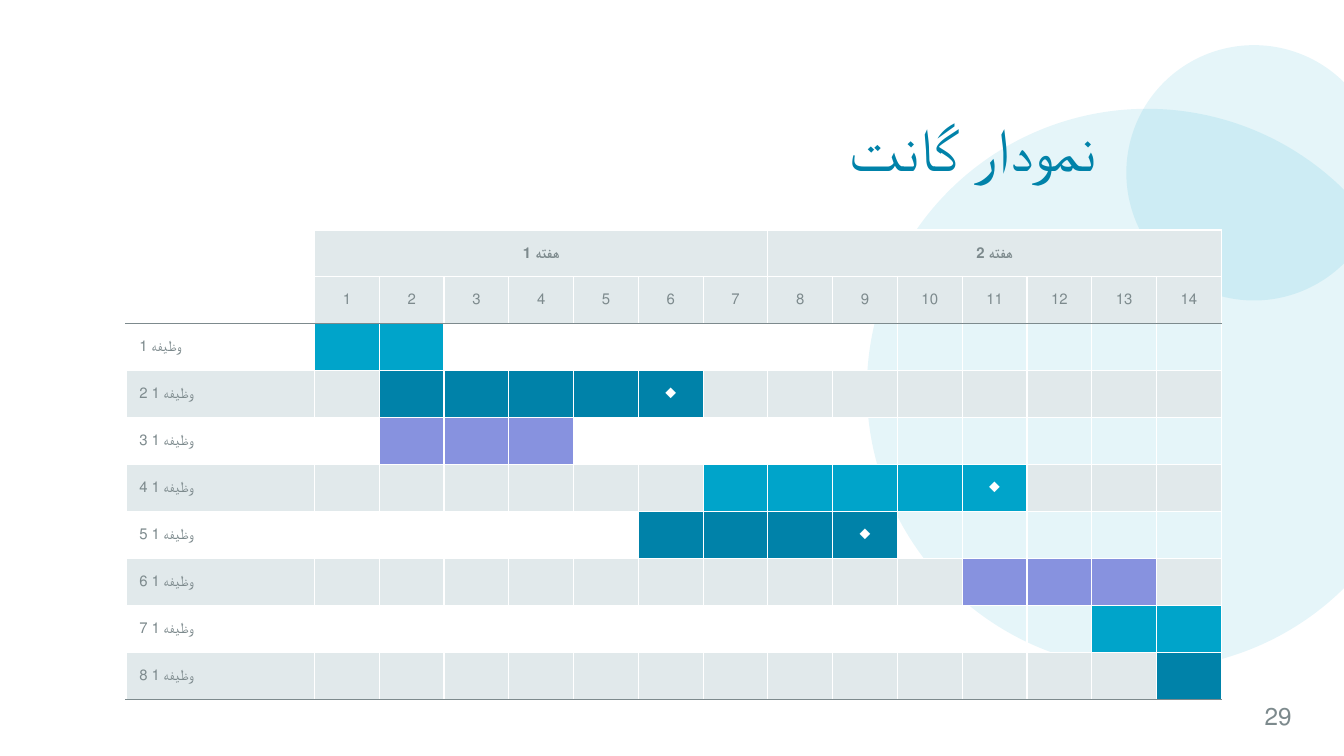
from lxml import etree
from pptx import Presentation
from pptx.dml.color import RGBColor
from pptx.enum.shapes import MSO_SHAPE as Shape
from pptx.enum.text import MSO_ANCHOR as Anchor, PP_ALIGN as Align
from pptx.oxml.ns import qn
from pptx.util import Pt

CYAN = RGBColor(0x00, 0xA4, 0xCA)
TEAL = RGBColor(0x00, 0x82, 0xA9)
VIOLET = RGBColor(0x87, 0x92, 0xDF)
PALE = RGBColor(0xE1, 0xE9, 0xEB)
GRAY = RGBColor(0x7D, 0x8A, 0x8D)
WHITE = RGBColor(0xFF, 0xFF, 0xFF)

DAYS = 14
DAY_WIDTH, LABEL_WIDTH, ROW_HEIGHT = 34.7, 101, 25.15
# Label, first day, last day, bar colour, ends in a milestone
TASKS = [
    ("وظیفه 1", 1, 2, CYAN, False),
    ("وظیفه 1 2", 2, 6, TEAL, True),
    ("وظیفه 1 3", 2, 4, VIOLET, False),
    ("وظیفه 1 4", 7, 11, CYAN, True),
    ("وظیفه 1 5", 6, 9, TEAL, True),
    ("وظیفه 1 6", 11, 13, VIOLET, False),
    ("وظیفه 1 7", 13, 14, CYAN, False),
    ("وظیفه 1 8", 14, 14, TEAL, False),
]
ROWS = len(TASKS) + 2


def write(frame, text, size, color, align, font="Roboto", bold=False):
    """Put one right-to-left paragraph in a text frame."""
    para = frame.paragraphs[0]
    para.text = text
    para.alignment = align
    para.font.name = font
    para.font.size = Pt(size)
    para.font.bold = bold
    para.font.color.rgb = color
    para._p.get_or_add_pPr().set("rtl", "1")
    return para


def set_borders(cell, top, bottom):
    """Draw thin borders, white at the sides; they come before the fill."""
    props = cell._tc.get_or_add_tcPr()
    sides = [("lnL", WHITE), ("lnR", WHITE), ("lnT", top), ("lnB", bottom)]
    for index, (side, color) in enumerate(sides):
        line = etree.Element(qn(f"a:{side}"), w=str(Pt(0.75)))
        solid = etree.SubElement(line, qn("a:solidFill"))
        etree.SubElement(solid, qn("a:srgbClr"), val=str(color))
        props.insert(index, line)


deck = Presentation()
deck.slide_width, deck.slide_height = Pt(720), Pt(405)
slide = deck.slides.add_slide(deck.slide_layouts[6])

# Background circles, cut off at the slide's right edge
for left, top, size in [(464.4, 58.3, 300.2), (603.4, 24.2, 136.8)]:
    circle = slide.shapes.add_shape(Shape.CHORD, Pt(left), Pt(top), Pt(size), Pt(size))
    circle.adjustments[0], circle.adjustments[1] = 27, 189
    circle.shadow.inherit = False
    circle.fill.solid()
    circle.fill.fore_color.rgb = CYAN
    color_node = circle._element.spPr.find(qn("a:solidFill"))[0]
    etree.SubElement(color_node, qn("a:alpha"), val="10000")
    circle.line.fill.background()

# Title and page number
for text, area, size, color, align, font, spacing in [
    ("نمودار گانت", (67.7, 51.8, 519.8, 59), 32, TEAL, Align.RIGHT, "Roboto Condensed", 0.9),
    ("29", (677.5, 372.2, 27.4, 22.3), 13, GRAY, Align.LEFT, "Roboto", 1.0),
]:
    box = slide.shapes.add_textbox(*[Pt(length) for length in area])
    frame = box.text_frame
    frame.word_wrap = True
    frame.vertical_anchor = Anchor.MIDDLE
    frame.margin_left = frame.margin_right = frame.margin_top = frame.margin_bottom = 0
    write(frame, text, size, color, align, font).line_spacing = spacing

# Gantt table
table = slide.shapes.add_table(
    ROWS, DAYS + 1, Pt(67.5), Pt(123.2),
    Pt(LABEL_WIDTH + DAYS * DAY_WIDTH), Pt(ROWS * ROW_HEIGHT),
).table
table.first_row = table.horz_banding = False
for row in table.rows:
    row.height = Pt(ROW_HEIGHT)
for index, column in enumerate(table.columns):
    column.width = Pt(DAY_WIDTH if index else LABEL_WIDTH)

# Week headings
for week in (1, 2):
    first = 1 + (week - 1) * 7
    heading = table.cell(0, first)
    heading.merge(table.cell(0, first + 6))
    write(heading.text_frame, f"هفته {week}", 8, GRAY, Align.CENTER, bold=True)

# Day numbers, task labels, bars and milestones
for row in range(ROWS):
    for day in range(DAYS + 1):
        cell = table.cell(row, day)
        cell.vertical_anchor = Anchor.MIDDLE
        if row < 2:
            fill = PALE if day else None
            if row == 1 and day:
                write(cell.text_frame, str(day), 8, GRAY, Align.CENTER)
        else:
            label, start, end, bar_color, milestone = TASKS[row - 2]
            fill = PALE if row % 2 else None
            if day == 0:
                write(cell.text_frame, label, 8, GRAY, Align.LEFT)
            elif start <= day <= end:
                fill = bar_color
                if milestone and day == end:
                    write(cell.text_frame, "◆", 8, WHITE, Align.CENTER)
        if not cell.text_frame.text:
            cell.text_frame.paragraphs[0].font.size = Pt(8)
            cell.margin_top = cell.margin_bottom = 0
        if fill is None:
            cell.fill.background()
        else:
            cell.fill.solid()
            cell.fill.fore_color.rgb = fill
        set_borders(
            cell,
            top=GRAY if row == 2 else WHITE,
            bottom=GRAY if row in (1, ROWS - 1) else WHITE,
        )

deck.save("out.pptx")
